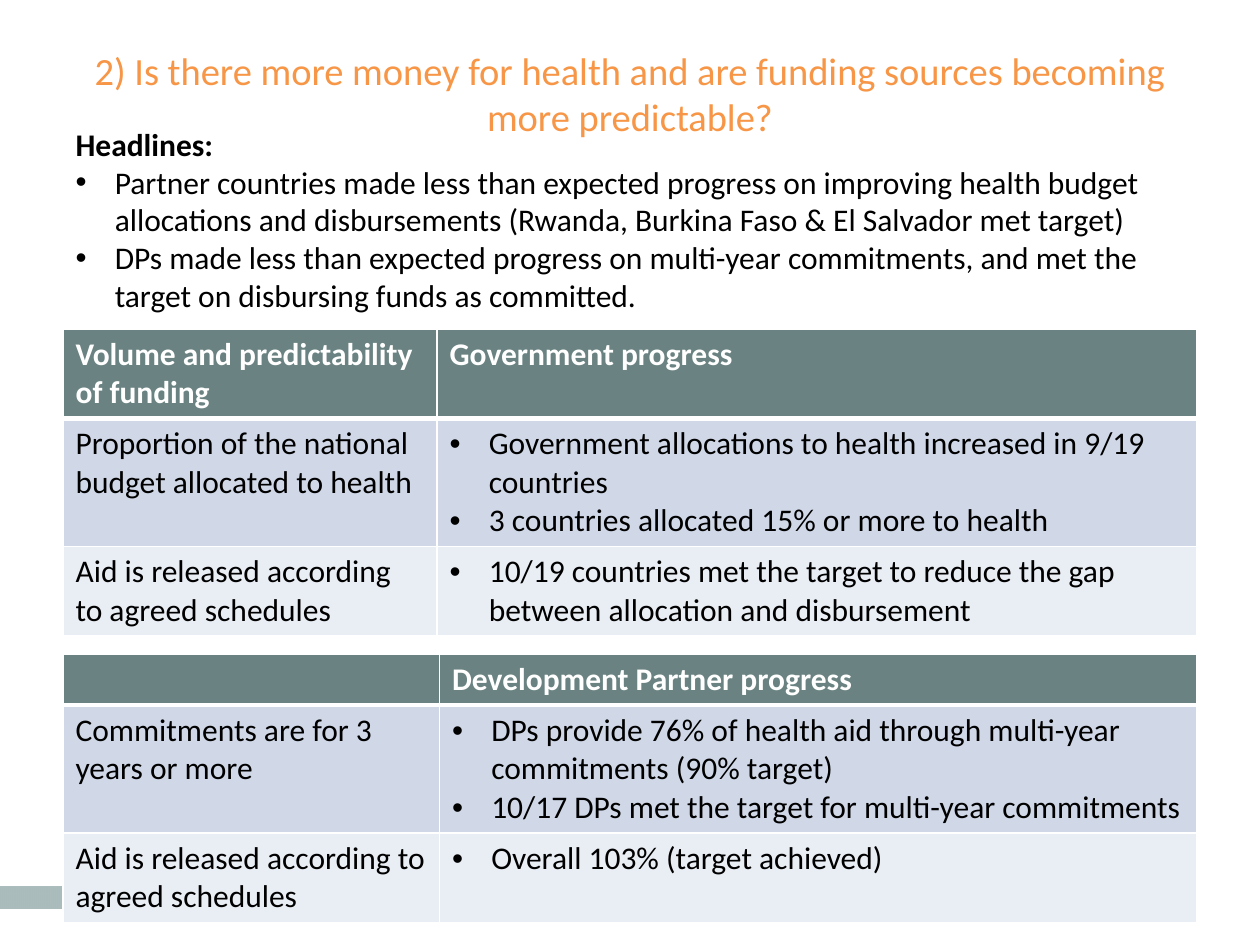
from lxml import etree
from pptx import Presentation
from pptx import util as u
from pptx.dml import color
from pptx.enum import shapes, text
from pptx.oxml import ns

HEAD, BAND, PALE = "6A8382", "D0D8E8", "E9EDF4"
LEFT, WIDE = 1.27, 22.86


def rgb(code):
    return color.RGBColor.from_string(code)


def node(root, tag, **attrs):
    return etree.SubElement(root, ns.qn(tag), **attrs)


def place(item, left, top, wide, high):
    item.left, item.top = u.Cm(left), u.Cm(top)
    item.width, item.height = u.Cm(wide), u.Cm(high)


def style(para, size, code, bold=False):
    font = para.font
    font.name, font.size, font.bold = "Calibri", u.Pt(size), bold
    font.color.rgb = rgb(code)


def mark(para, dot):
    props = para._p.get_or_add_pPr()
    props.set("marL", str(u.Cm(0.79) if dot else 0))
    props.set("indent", str(-u.Cm(0.79) if dot else 0))
    if dot:
        node(props, "a:buFont", typeface="Arial")
        node(props, "a:buChar", char="•")
    else:
        node(props, "a:buNone")


def write(frame, lines, code="000000", bold=False):
    for i, (line, dot) in enumerate(lines):
        para = frame.add_paragraph() if i else frame.paragraphs[0]
        para.text = line
        mark(para, dot)
        para.space_before = u.Pt(0)
        style(para, 18, code, bold)


def add_bar(slide):
    bar = slide.shapes.add_shape(
        shapes.MSO_SHAPE.RECTANGLE, 0, u.Cm(17.88), u.Cm(23.6), u.Cm(0.43))
    bar.shadow.inherit = False
    bar.line.fill.background()
    bar.fill.gradient()
    bar.fill.gradient_angle = 0
    stops = zip(bar.fill.gradient_stops, ((0.22, "1A4B4A"), (1, "FFFFFF")))
    for stop, (spot, code) in stops:
        stop.position = spot
        stop.color.rgb = rgb(code)
    for tint in bar._element.spPr.iter(ns.qn("a:srgbClr")):
        node(tint, "a:alpha", val="37000")


def add_title(slide, words):
    title = slide.shapes.title
    place(title, LEFT, 0.76, WIDE, 3.18)
    frame = title.text_frame
    frame.text = words
    frame.auto_size = text.MSO_AUTO_SIZE.NONE
    frame.vertical_anchor = text.MSO_ANCHOR.MIDDLE
    frame.margin_bottom = u.Cm(1.07)
    para = frame.paragraphs[0]
    para.alignment = text.PP_ALIGN.CENTER
    style(para, 22, "F79646")


def add_list(slide, head, items):
    body = slide.placeholders[1]
    place(body, LEFT, 2.39, WIDE, 4.11)
    frame = body.text_frame
    frame.auto_size = text.MSO_AUTO_SIZE.NONE
    write(frame, [(head, False)] + [(item, True) for item in items])
    frame.paragraphs[0].font.bold = True


def edge(cell, base):
    props = cell._tc.get_or_add_tcPr()
    for i, side in enumerate("LRTB"):
        size = u.Pt(base if side == "B" else 1)
        line = etree.Element(ns.qn("a:ln" + side), w=str(size))
        node(node(line, "a:solidFill"), "a:srgbClr", val="FFFFFF")
        props.insert(i, line)


def add_grid(slide, top, split, highs, rows):
    grid = slide.shapes.add_table(
        len(rows), 2, u.Cm(LEFT), u.Cm(top), u.Cm(WIDE), u.Cm(sum(highs))).table
    grid.columns[0].width = u.Cm(split)
    grid.columns[1].width = u.Cm(WIDE - split)
    for r, (label, items) in enumerate(rows):
        grid.rows[r].height = u.Cm(highs[r])
        first = r == 0
        code = "FFFFFF" if first else "000000"
        parts = [(label, False)], [(item, not first) for item in items]
        for c, lines in enumerate(parts):
            cell = grid.cell(r, c)
            cell.fill.solid()
            cell.fill.fore_color.rgb = rgb((HEAD, BAND, PALE)[r])
            write(cell.text_frame, lines, code, first)
            edge(cell, 3 if first else 1)


def main():
    deck = Presentation()
    deck.slide_width, deck.slide_height = u.Cm(25.4), u.Cm(19.05)
    slide = deck.slides.add_slide(deck.slide_layouts[1])
    add_bar(slide)
    add_title(slide, "2) Is there more money for health and are funding "
              "sources becoming more predictable?")
    add_list(slide, "Headlines:", [
        "Partner countries made less than expected progress on improving "
        "health budget allocations and disbursements (Rwanda, Burkina Faso "
        "& El Salvador met target)",
        "DPs made less than expected progress on multi-year commitments, "
        "and met the target on disbursing funds as committed."])
    aid = "Aid is released according to agreed schedules"
    add_grid(slide, 6.63, 7.54, (1.75, 2.5, 1.75), [
        ("Volume and predictability of funding", ["Government progress"]),
        ("Proportion of the national budget allocated to health", [
            "Government allocations to health increased in 9/19 countries",
            "3 countries allocated 15% or more to health"]),
        (aid, ["10/19 countries met the target to reduce the gap between "
               "allocation and disbursement"])])
    add_grid(slide, 13.18, 7.59, (1, 2.5, 1.75), [
        ("", ["Development Partner progress"]),
        ("Commitments are for 3 years or more", [
            "DPs provide 76% of health aid through multi-year commitments "
            "(90% target)",
            "10/17 DPs met the target for multi-year commitments"]),
        (aid, ["Overall 103% (target achieved)"])])
    deck.save("out.pptx")


if __name__ == "__main__":
    main()
